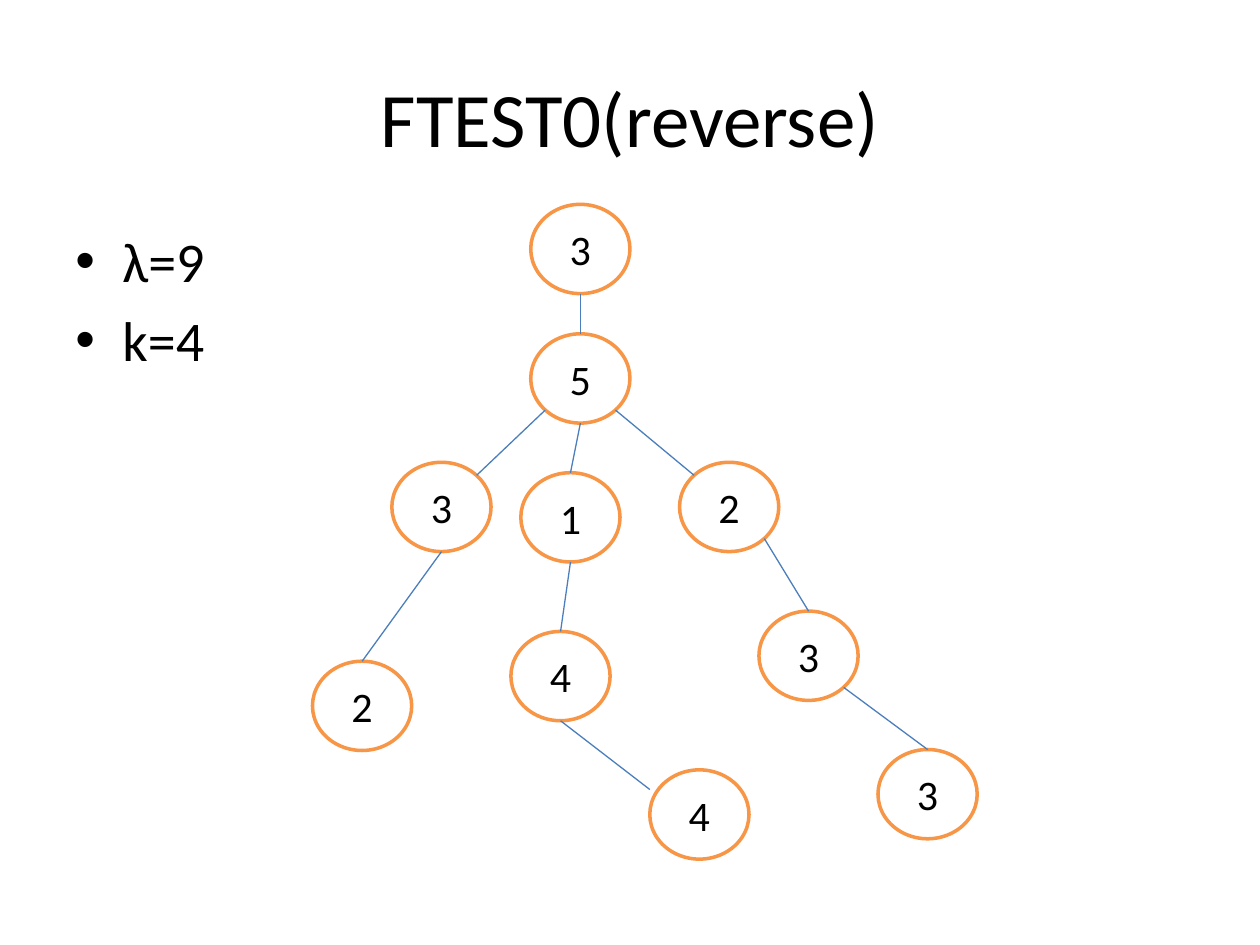
from lxml import etree
from pptx import Presentation
from pptx.dml.color import RGBColor
from pptx.enum.shapes import MSO_CONNECTOR, MSO_SHAPE
from pptx.enum.text import MSO_ANCHOR, PP_ALIGN
from pptx.oxml.ns import qn
from pptx.util import Cm, Pt

CENTER, LEFT = PP_ALIGN.CENTER, PP_ALIGN.LEFT
MIDDLE, TOP_ANCHOR = MSO_ANCHOR.MIDDLE, MSO_ANCHOR.TOP
OVAL, STRAIGHT = MSO_SHAPE.OVAL, MSO_CONNECTOR.STRAIGHT

BLACK = RGBColor(0x00, 0x00, 0x00)
WHITE = RGBColor(0xFF, 0xFF, 0xFF)
ORANGE = RGBColor(0xF7, 0x96, 0x46)
BLUE = RGBColor(0x4B, 0x7E, 0xBC)
FONT = "Calibri"

NODE_WIDTH, NODE_HEIGHT = 2.0, 1.8

# Tree nodes: name -> (value, left, top) in centimetres
NODES = {
    "root": ("3", 10.7, 4.12),
    "hub": ("5", 10.7, 6.73),
    "left": ("3", 7.9, 9.32),
    "left leaf": ("2", 6.3, 13.33),
    "middle": ("1", 10.5, 9.53),
    "middle child": ("4", 10.3, 12.73),
    "middle leaf": ("4", 13.1, 15.52),
    "right": ("2", 13.7, 9.32),
    "right child": ("3", 15.3, 12.32),
    "right leaf": ("3", 17.7, 15.11),
}

# Points on a node as fractions of its width and height
TOP, BOTTOM = (0.5, 0), (0.5, 1)
TOP_LEFT, TOP_RIGHT = (0.146, 0.146), (0.854, 0.146)
BOTTOM_LEFT, BOTTOM_RIGHT = (0.146, 0.854), (0.854, 0.854)
OUTER_LEFT = (0, 0.22)

EDGES = [
    ("root", BOTTOM, "hub", TOP),
    ("hub", BOTTOM_LEFT, "left", TOP_RIGHT),
    ("hub", BOTTOM, "middle", TOP),
    ("hub", BOTTOM_RIGHT, "right", TOP_LEFT),
    ("left", BOTTOM, "left leaf", TOP),
    ("middle", BOTTOM, "middle child", TOP),
    ("middle child", BOTTOM, "middle leaf", OUTER_LEFT),
    ("right", BOTTOM_RIGHT, "right child", TOP),
    ("right child", BOTTOM_RIGHT, "right leaf", TOP),
]


def write_text(shape, text, size, alignment, anchor):
    text_frame = shape.text_frame
    text_frame.text = text
    text_frame.word_wrap = True
    text_frame.vertical_anchor = anchor
    for paragraph in text_frame.paragraphs:
        paragraph.alignment = alignment
        for run in paragraph.runs:
            run.font.name = FONT
            run.font.size = Pt(size)
            run.font.color.rgb = BLACK


def add_title(slide, text):
    title = slide.shapes.add_textbox(Cm(1.27), Cm(0.76), Cm(22.86), Cm(3.18))
    write_text(title, text, 44, CENTER, MIDDLE)


def add_bullets(slide, lines):
    body = slide.shapes.add_textbox(Cm(1.27), Cm(4.45), Cm(22.86), Cm(12.57))
    write_text(body, "\n".join(lines), 32, LEFT, TOP_ANCHOR)
    for paragraph in body.text_frame.paragraphs:
        paragraph.space_before = Pt(6.4)
        properties = paragraph._p.get_or_add_pPr()
        properties.set("marL", str(Cm(0.95)))
        properties.set("indent", str(-Cm(0.95)))
        etree.SubElement(properties, qn("a:buFont")).set("typeface", "Arial")
        etree.SubElement(properties, qn("a:buChar")).set("char", "•")


def add_node(slide, value, left, top):
    node = slide.shapes.add_shape(
        OVAL, Cm(left), Cm(top), Cm(NODE_WIDTH), Cm(NODE_HEIGHT))
    node.shadow.inherit = False
    node.fill.solid()
    node.fill.fore_color.rgb = WHITE
    node.line.color.rgb = ORANGE
    node.line.width = Pt(2)
    write_text(node, value, 24, CENTER, MIDDLE)


def node_point(name, site):
    _, left, top = NODES[name]
    return Cm(left + site[0] * NODE_WIDTH), Cm(top + site[1] * NODE_HEIGHT)


def add_edge(slide, parent, parent_site, child, child_site):
    edge = slide.shapes.add_connector(
        STRAIGHT, *node_point(parent, parent_site), *node_point(child, child_site))
    edge.line.color.rgb = BLUE
    edge.line.width = Pt(0.75)
    etree.SubElement(edge._element.spPr, qn("a:effectLst"))


def main():
    presentation = Presentation()
    presentation.slide_width = Cm(25.4)
    presentation.slide_height = Cm(19.05)
    slide = presentation.slides.add_slide(presentation.slide_layouts[6])
    add_title(slide, "FTEST0(reverse)")
    add_bullets(slide, ["λ=9", "k=4"])
    for node in NODES.values():
        add_node(slide, *node)
    for edge in EDGES:
        add_edge(slide, *edge)
    presentation.save("out.pptx")


if __name__ == "__main__":
    main()
